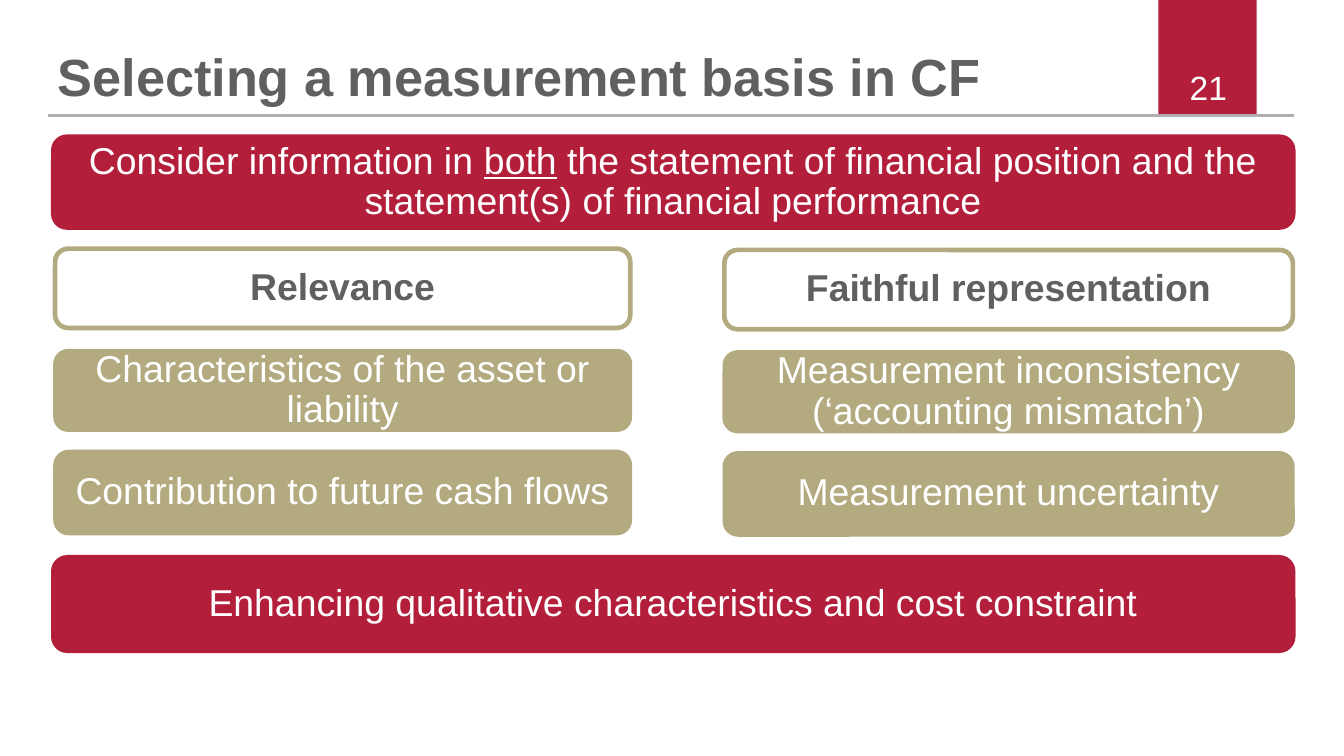
"""Build the slide on selecting a measurement basis."""
from dataclasses import dataclass
from typing import Optional

from lxml.etree import SubElement
from pptx import Presentation
from pptx.dml.color import RGBColor
from pptx.enum.shapes import MSO_CONNECTOR, MSO_SHAPE
from pptx.enum.text import MSO_ANCHOR, MSO_AUTO_SIZE, PP_ALIGN
from pptx.oxml.ns import qn
from pptx.util import Inches, Pt

COLORS = {
    "red": "B31E3A",
    "tab": "B31E3B",
    "sand": "B3AA7F",
    "gray": "5F6062",
    "rule": "AFAFB0",
    "white": "FFFFFF",
}


@dataclass(frozen=True)
class Style:
    fill: Optional[str]
    line: Optional[str]
    line_width: float
    text: str
    bold: bool = False


@dataclass(frozen=True)
class Card:
    left: float
    top: float
    width: float
    height: float
    runs: tuple[str, ...]
    style: Style
    underlined: str = ""


@dataclass(frozen=True)
class Column:
    left: float
    top: float
    width: float
    labels: tuple[str, str, str]


BANNER = Style("red", None, 0, "white")
HEADING = Style(None, "sand", 2.5, "gray", True)
FACTOR = Style("sand", "sand", 2, "white")

BANNERS = (
    Card(0.38, 1, 9.26, 0.71,
         ("Consider information in ", "both",
          " the statement of financial position and the statement(s) of financial performance"),
         BANNER, "both"),
    Card(0.38, 4.13, 9.26, 0.73,
         ("Enhancing qualitative characteristics and cost constraint",), BANNER),
)
COLUMNS = (
    Column(0.41, 1.85, 4.28,
           ("Relevance", "Characteristics of the asset or liability",
            "Contribution to future cash flows")),
    Column(5.39, 1.86, 4.23,
           ("Faithful representation",
            "Measurement inconsistency (‘accounting mismatch’)",
            "Measurement uncertainty")),
)
ROWS = ((0, 0.59, HEADING), (0.76, 0.59, FACTOR), (1.51, 0.61, FACTOR))


def color(name: str) -> RGBColor:
    """Return the named palette colour."""
    return RGBColor.from_string(COLORS[name])


def set_font(paragraph, size: float, color_name: str, bold: bool = False) -> None:
    """Format the whole paragraph in Arial."""
    font = paragraph.font
    font.name, font.size, font.bold = "Arial", Pt(size), bold
    font.color.rgb = color(color_name)


def set_margins(frame, horizontal: float, vertical: float) -> None:
    """Set the insets of a text frame."""
    frame.margin_left = frame.margin_right = Inches(horizontal)
    frame.margin_top = frame.margin_bottom = Inches(vertical)


def add_title(slide, text: str) -> None:
    """Place and format the title."""
    title = slide.shapes.title
    title.left, title.top = Inches(0.43), Inches(0)
    title.width, title.height = Inches(7.74), Inches(0.8)
    frame = title.text_frame
    frame.text = text
    frame.auto_size = MSO_AUTO_SIZE.NONE
    frame.vertical_anchor = MSO_ANCHOR.BOTTOM
    set_margins(frame, 0, 0)
    paragraph = frame.paragraphs[0]
    paragraph.alignment = PP_ALIGN.LEFT
    paragraph.line_spacing = 0.9
    set_font(paragraph, 28, "gray", True)


def add_header(slide, number: str) -> None:
    """Draw the page tab, the rule and the page number."""
    tab = slide.shapes.add_shape(
        MSO_SHAPE.RECTANGLE, Inches(8.62), Inches(0), Inches(0.73), Inches(0.86))
    tab.shadow.inherit = False
    tab.fill.solid()
    tab.fill.fore_color.rgb = color("tab")
    tab.line.fill.background()

    rule = slide.shapes.add_connector(
        MSO_CONNECTOR.STRAIGHT, Inches(0.36), Inches(0.86), Inches(9.63), Inches(0.86))
    rule.line.color.rgb = color("rule")
    rule.line.width = Pt(1.2)
    SubElement(rule._element.spPr, qn("a:effectLst"))

    box = slide.shapes.add_textbox(Inches(6.89), Inches(0.5), Inches(2.33), Inches(0.3))
    frame = box.text_frame
    frame.word_wrap = True
    frame.vertical_anchor = MSO_ANCHOR.MIDDLE
    set_margins(frame, 0.09, 0.04)
    frame.text = number
    paragraph = frame.paragraphs[0]
    paragraph.alignment = PP_ALIGN.RIGHT
    set_font(paragraph, 18, "white")


def add_card(slide, card: Card) -> None:
    """Draw a rounded box with centred text."""
    shape = slide.shapes.add_shape(
        MSO_SHAPE.ROUNDED_RECTANGLE, Inches(card.left), Inches(card.top),
        Inches(card.width), Inches(card.height))
    shape.shadow.inherit = False
    style = card.style
    if style.fill:
        shape.fill.solid()
        shape.fill.fore_color.rgb = color(style.fill)
    else:
        shape.fill.background()
    if style.line:
        shape.line.color.rgb = color(style.line)
        shape.line.width = Pt(style.line_width)
    else:
        shape.line.fill.background()

    frame = shape.text_frame
    frame.word_wrap = True
    frame.vertical_anchor = MSO_ANCHOR.MIDDLE
    set_margins(frame, 0.06, 0.06)
    paragraph = frame.paragraphs[0]
    paragraph.alignment = PP_ALIGN.CENTER
    paragraph.line_spacing = 0.9
    for text in card.runs:
        run = paragraph.add_run()
        run.text = text
        if text == card.underlined:
            run.font.underline = True
    set_font(paragraph, 20, style.text, style.bold)


def main() -> None:
    """Build and save the presentation."""
    presentation = Presentation()
    presentation.slide_width = Inches(10)
    presentation.slide_height = presentation.slide_width * 9 // 16
    slide = presentation.slides.add_slide(presentation.slide_layouts[5])
    add_header(slide, "21")
    add_title(slide, "Selecting a measurement basis in CF")
    for column in COLUMNS:
        for label, (offset, height, style) in zip(column.labels, ROWS):
            add_card(slide, Card(column.left, column.top + offset, column.width,
                                 height, (label,), style))
    for banner in BANNERS:
        add_card(slide, banner)
    presentation.save("out.pptx")


if __name__ == "__main__":
    main()
